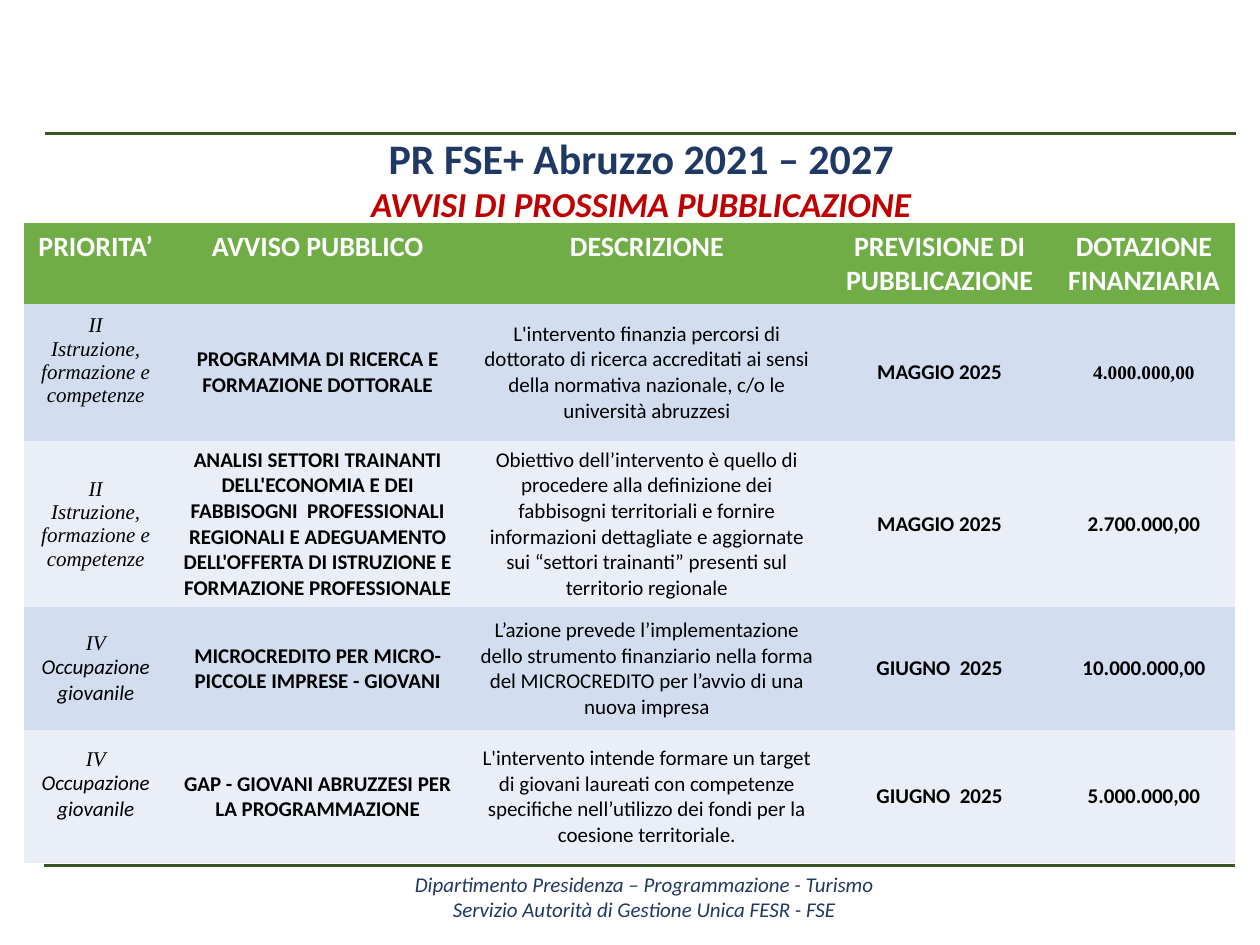
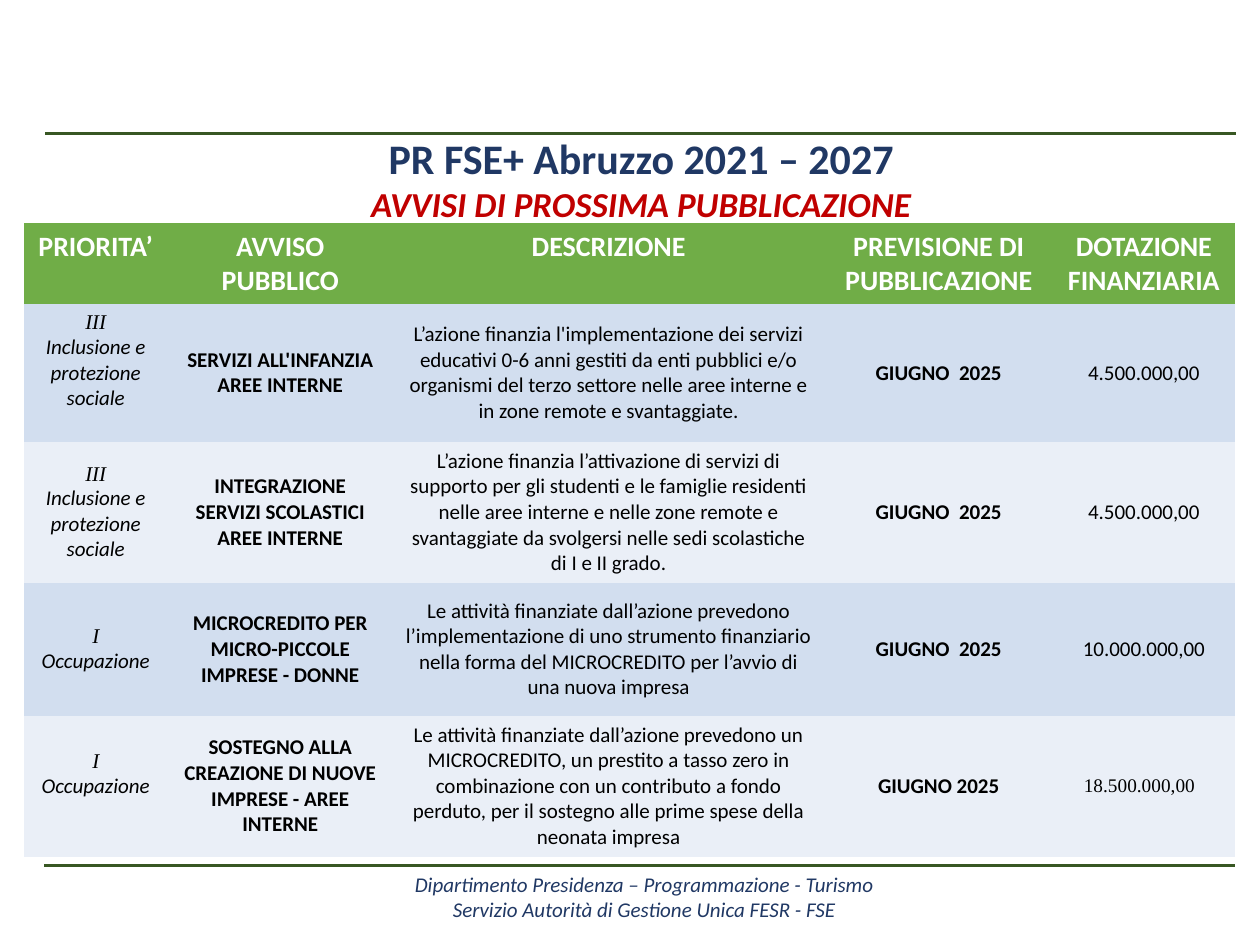
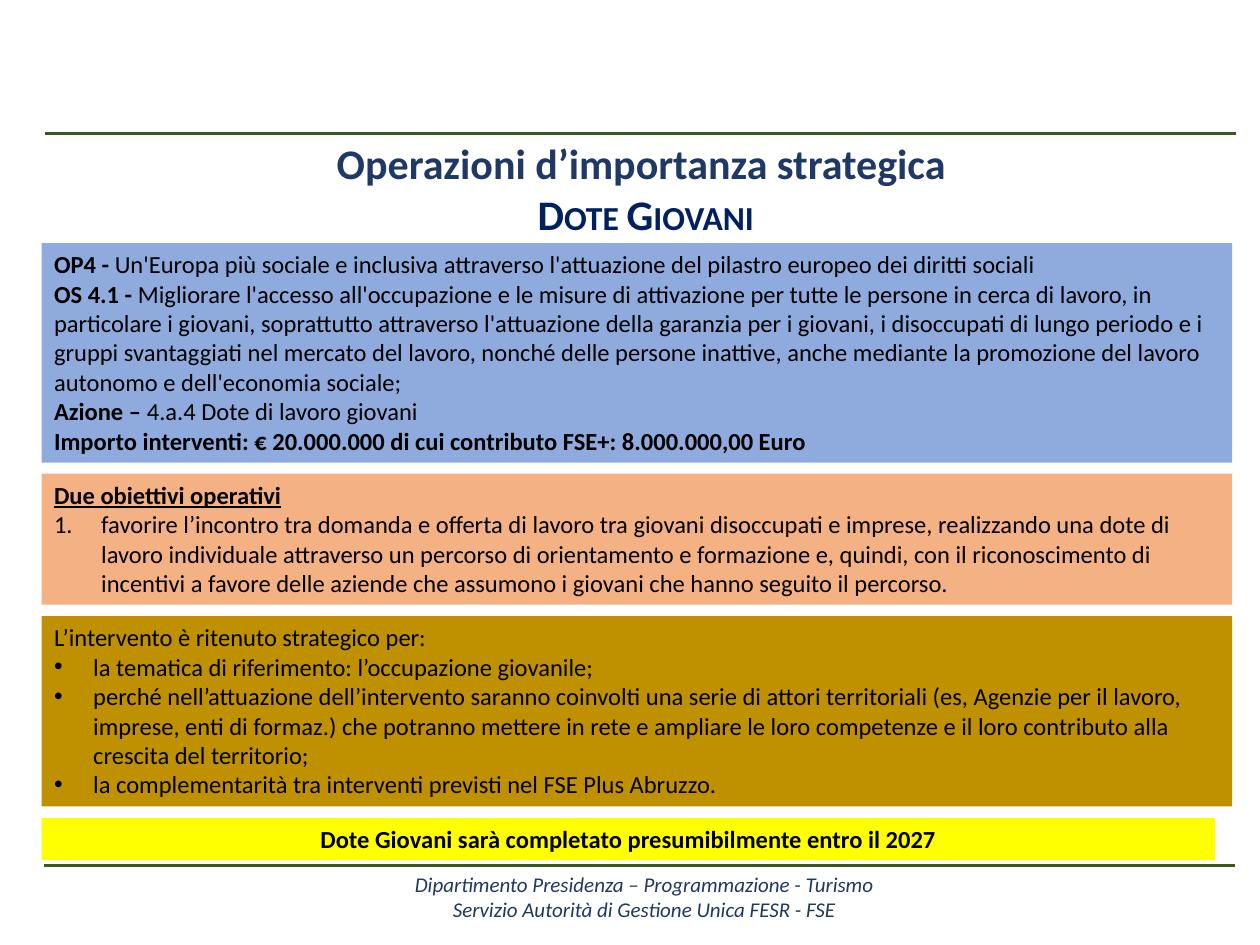
from lxml import etree
from pptx import Presentation
from pptx.dml.color import RGBColor
from pptx.enum.shapes import MSO_CONNECTOR, MSO_SHAPE
from pptx.enum.text import MSO_ANCHOR, PP_ALIGN
from pptx.oxml.ns import qn
from pptx.util import Cm, Pt

LEFT, MID = PP_ALIGN.LEFT, PP_ALIGN.CENTER
TOP, CORE = MSO_ANCHOR.TOP, MSO_ANCHOR.MIDDLE
RECT, LINE = MSO_SHAPE.RECTANGLE, MSO_CONNECTOR.STRAIGHT

NAVY, DEEP, RED, RULE = "203864", "002060", "C00000", "385723"
HEAD, BANDS = "70AD47", ("D2DEEF", "EAEFF7")
BLACK, WHITE = "000000", "FFFFFF"
BLUE, PEACH, GOLD, YELLOW = "8FAADC", "F4B183", "BF9000", "FFFF00"
NO_GRID = "{2D5ABB26-0587-4C30-8999-92F81FD0307C}"

SERIF = {"name": "Times New Roman"}
BOLD, SLANT = {"bold": True}, {"italic": True}
SMALL = SERIF | {"size": Pt(11)}
CELL = {"size": Pt(12)}
BODY = {"size": Pt(14)}
TITLE = {"size": Pt(24), "bold": True, "color": NAVY}
SUB = {"size": Pt(20), "bold": True, "italic": True, "color": RED}
FOOT = {"size": Pt(12), "italic": True, "color": NAVY}
TOPS = {"size": Pt(16), "bold": True, "color": WHITE}

HEADS = ["PRIORITA’", "AVVISO PUBBLICO", "DESCRIZIONE",
         "PREVISIONE DI\nPUBBLICAZIONE", "DOTAZIONE FINANZIARIA"]
STUDY = "Istruzione, formazione e competenze"
YOUTH = "Occupazione giovanile"
CARE = "Inclusione e protezione sociale"
WORK = "Occupazione"

FIRST = [
    ("II", STUDY, "PROGRAMMA DI RICERCA E FORMAZIONE DOTTORALE",
     "L'intervento finanzia percorsi di dottorato di ricerca accreditati ai "
     "sensi della normativa nazionale, c/o le università abruzzesi",
     "MAGGIO 2025", "4.000.000,00", BOLD | SMALL),
    ("II", STUDY,
     "ANALISI SETTORI TRAINANTI DELL'ECONOMIA E DEI FABBISOGNI  PROFESSIONALI "
     "REGIONALI E ADEGUAMENTO DELL'OFFERTA DI ISTRUZIONE E FORMAZIONE "
     "PROFESSIONALE",
     "Obiettivo dell’intervento è quello di procedere alla definizione dei "
     "fabbisogni territoriali e fornire informazioni dettagliate e aggiornate "
     "sui “settori trainanti” presenti sul territorio regionale",
     "MAGGIO 2025", "2.700.000,00", BOLD),
    ("IV", YOUTH, "MICROCREDITO PER MICRO-PICCOLE IMPRESE - GIOVANI",
     "L’azione prevede l’implementazione dello strumento finanziario nella "
     "forma del MICROCREDITO per l’avvio di una nuova impresa",
     "GIUGNO  2025", "10.000.000,00", BOLD),
    ("IV", YOUTH, "GAP - GIOVANI ABRUZZESI PER LA PROGRAMMAZIONE",
     "L'intervento intende formare un target di giovani laureati con "
     "competenze specifiche nell’utilizzo dei fondi per la coesione "
     "territoriale.",
     "GIUGNO  2025", "5.000.000,00", BOLD),
]
NEXT = [
    ("III", CARE, "SERVIZI ALL'INFANZIA AREE INTERNE",
     "L’azione finanzia l'implementazione dei servizi educativi 0-6 anni "
     "gestiti da enti pubblici e/o organismi del terzo settore nelle aree "
     "interne e in zone remote e svantaggiate.",
     "GIUGNO  2025", "4.500.000,00", {}),
    ("III", CARE, "INTEGRAZIONE SERVIZI SCOLASTICI AREE INTERNE",
     "L’azione finanzia l’attivazione di servizi di supporto per gli studenti "
     "e le famiglie residenti nelle aree interne e nelle zone remote e "
     "svantaggiate da svolgersi nelle sedi scolastiche di I e II grado.",
     "GIUGNO  2025", "4.500.000,00", {}),
    ("I", WORK, "MICROCREDITO PER MICRO-PICCOLE IMPRESE - DONNE",
     "Le attività finanziate dall’azione prevedono l’implementazione di uno "
     "strumento finanziario nella forma del MICROCREDITO per l’avvio di una "
     "nuova impresa",
     "GIUGNO  2025", "10.000.000,00", {}),
    ("I", WORK, "SOSTEGNO ALLA CREAZIONE DI NUOVE IMPRESE - AREE INTERNE",
     "Le attività finanziate dall’azione prevedono un MICROCREDITO, un "
     "prestito a tasso zero in combinazione con un contributo a fondo "
     "perduto, per il sostegno alle prime spese della neonata impresa",
     "GIUGNO 2025", "18.500.000,00", SMALL),
]
GOALS = [
    [("OP4 - ", BOLD),
     ("Un'Europa più sociale e inclusiva attraverso l'attuazione del pilastro "
      "europeo dei diritti sociali", {})],
    [("OS 4.1 - ", BOLD),
     ("Migliorare l'accesso all'occupazione e le misure di attivazione per "
      "tutte le persone in cerca di lavoro, in particolare i giovani, "
      "soprattutto attraverso l'attuazione della garanzia per i giovani, i "
      "disoccupati di lungo periodo e i gruppi svantaggiati nel mercato del "
      "lavoro, nonché delle persone inattive, anche mediante la promozione "
      "del lavoro autonomo e dell'economia sociale;", {})],
    [("Azione – ", BOLD), ("4.a.4 Dote di lavoro giovani", {})],
    [("Importo interventi: € 20.000.000 di cui contributo FSE+: "
      "8.000.000,00 Euro", BOLD)],
]
AIMS = [
    [("Due obiettivi operativi", BOLD | {"underline": True})],
    [("favorire l’incontro tra domanda e offerta di lavoro tra giovani "
      "disoccupati e imprese, realizzando una dote di lavoro individuale "
      "attraverso un percorso di orientamento e formazione e, quindi, con il "
      "riconoscimento di incentivi a favore delle aziende che assumono i "
      "giovani che hanno seguito il percorso.", {})],
]
CAUSES = [
    [("L’intervento è ritenuto strategico per:", {})],
    [("la tematica di riferimento: l’occupazione giovanile;", {})],
    [("perché nell’attuazione dell’intervento saranno coinvolti una serie di "
      "attori territoriali (es, Agenzie per il lavoro, imprese, enti di "
      "formaz.) che potranno mettere in rete e ampliare le loro competenze e "
      "il loro contributo alla crescita del territorio;", {})],
    [("la complementarità tra interventi previsti nel FSE Plus Abruzzo.", {})],
]
CLOSE = [[("Dote Giovani sarà completato presumibilmente entro il 2027", BOLD)]]


def paint(spot, tint):
    spot.rgb = RGBColor.from_string(tint)


def fill(thing, tint):
    thing.fill.solid()
    paint(thing.fill.fore_color, tint)


def write(frame, paras, base, align=MID):
    frame.word_wrap = True
    for i, runs in enumerate(paras):
        para = frame.add_paragraph() if i else frame.paragraphs[0]
        para.alignment = align
        for text, extra in runs:
            run = para.add_run()
            run.text = text
            style = {"name": "Calibri", "color": BLACK} | base | extra
            paint(run.font.color, style.pop("color"))
            for key, val in style.items():
                setattr(run.font, key, val)


def add_text(slide, box, paras, base=BODY):
    frame = slide.shapes.add_textbox(*map(Cm, box)).text_frame
    write(frame, paras, base)
    return frame


def add_rule(slide, left, right, y):
    line = slide.shapes.add_connector(LINE, Cm(left), Cm(y), Cm(right), Cm(y))
    line.line.width = Pt(2)
    paint(line.line.color, RULE)
    etree.SubElement(line._element.spPr, qn("a:effectLst"))


def add_panel(slide, box, tint, paras, align=LEFT):
    shape = slide.shapes.add_shape(RECT, *map(Cm, box))
    shape.shadow.inherit = False
    fill(shape, tint)
    shape.line.fill.background()
    frame = shape.text_frame
    frame.vertical_anchor = TOP
    write(frame, paras, BODY, align)
    return frame


def add_marks(frame, indent, tag, **marks):
    for para in frame.paragraphs[1:]:
        props = para._p.get_or_add_pPr()
        props.set("marL", str(Cm(indent)))
        props.set("indent", str(-Cm(indent)))
        font = etree.SubElement(props, qn("a:buFont"))
        font.set("typeface", "Arial" if tag == "a:buChar" else "+mj-lt")
        mark = etree.SubElement(props, qn(tag))
        for key, val in marks.items():
            mark.set(key, val)


def add_grid(slide, rows, widths, heights, theme):
    box = map(Cm, (0.48, 4.5, sum(widths), sum(heights)))
    grid = slide.shapes.add_table(len(heights), len(widths), *box).table
    grid._tbl.tblPr.find(qn("a:tableStyleId")).text = NO_GRID
    for col, width in zip(grid.columns, widths):
        col.width = Cm(width)
    for row, height in zip(grid.rows, heights):
        row.height = Cm(height)
    for cell, text in zip(grid.rows[0].cells, HEADS):
        fill(cell, HEAD)
        write(cell.text_frame, [[(part, {})] for part in text.split("\n")], TOPS)
    for i, (axis, name, call, about, date, sum_, look) in enumerate(rows):
        kind = SERIF if name == STUDY else {}
        parts = [
            [[(axis, SLANT | SERIF)], [(name, SLANT | kind)]],
            [[(call, BOLD)]], [[(about, {})]], [[(date, BOLD)]], [[(sum_, look)]],
        ]
        cells = list(grid.rows[i + 1].cells)
        for cell, paras in zip(cells, parts):
            fill(cell, BANDS[i % 2])
            cell.vertical_anchor = CORE
            write(cell.text_frame, paras, CELL | theme)
        if i in (0, len(rows) - 1):
            cells[0].margin_bottom = Cm(0.6)
    return grid


def add_base(deck):
    slide = deck.slides.add_slide(deck.slide_layouts[6])
    add_rule(slide, 0.91, 24.92, 2.69)
    add_rule(slide, 0.89, 24.89, 17.45)
    foot = add_text(slide, (0.99, 17.56, 24, 1.1), [
        [("Dipartimento Presidenza – Programmazione - Turismo", {})],
        [("Servizio Autorità di Gestione Unica FESR - FSE", {})]], FOOT)
    foot.margin_top = foot.margin_bottom = 0
    return slide


def add_calls(deck, rows, widths, heights):
    slide = add_base(deck)
    grid = add_grid(slide, rows, widths, heights, {})
    add_text(slide, (0.99, 2.54, 23.88, 2), [
        [("PR FSE+ Abruzzo 2021 – 2027", TITLE)],
        [("AVVISI DI PROSSIMA PUBBLICAZIONE", SUB)]])
    return grid


def add_plan(deck):
    slide = add_base(deck)
    add_text(slide, (0.99, 2.64, 23.88, 1.27),
             [[("Operazioni d’importanza strategica", {})]], TITLE)
    name = add_text(slide, (1.02, 3.68, 24, 1.27),
                    [[("Dote Giovani", {"color": DEEP})]], TITLE)
    name.paragraphs[0].runs[0].font._element.set("cap", "small")
    add_panel(slide, (0.84, 4.9, 24, 4.43), BLUE, GOALS)
    aims = add_panel(slide, (0.84, 9.55, 24, 2.64), PEACH, AIMS)
    add_marks(aims, 0.95, "a:buAutoNum", type="arabicPeriod")
    causes = add_panel(slide, (0.84, 12.42, 24, 3.84), GOLD, CAUSES)
    add_marks(causes, 0.79, "a:buChar", char="•")
    add_panel(slide, (0.84, 16.49, 23.65, 0.85), YELLOW, CLOSE, MID)


def main():
    deck = Presentation()
    deck.slide_width, deck.slide_height = Cm(25.4), Cm(19.05)
    add_calls(deck, FIRST, (2.9, 6.05, 7.22, 4.58, 3.66),
              (1.63, 2.66, 3.35, 2.48, 2.68))
    grid = add_calls(deck, NEXT, (2.9, 4.54, 8.7, 4.61, 3.66),
                     (1.63, 2.78, 2.84, 2.68, 2.84))
    last = grid.cell(4, 4)
    last.margin_left, last.margin_right = Cm(0.62), Cm(0.03)
    last.text_frame.paragraphs[0].alignment = LEFT
    add_plan(deck)
    deck.save("out.pptx")


if __name__ == "__main__":
    main()
